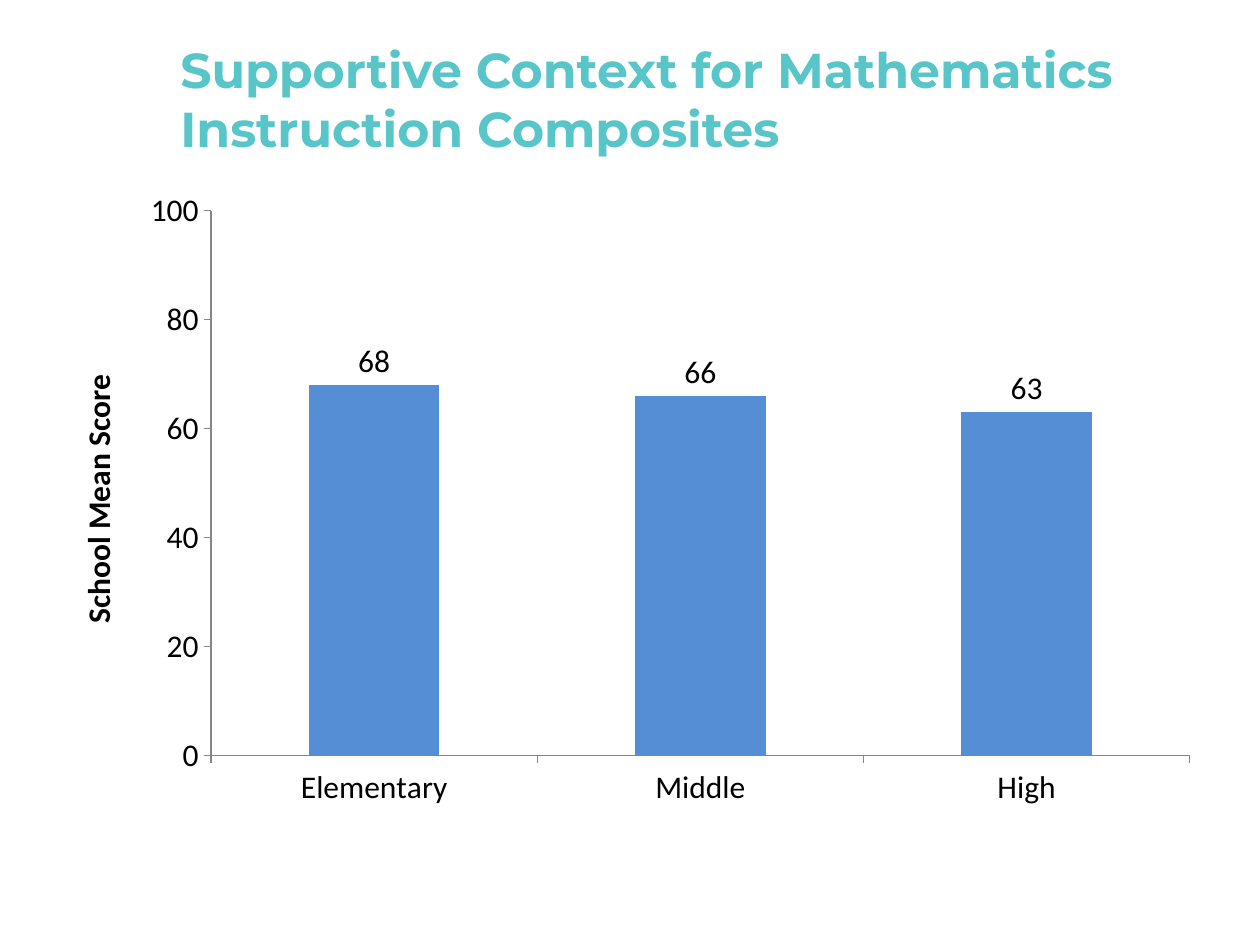
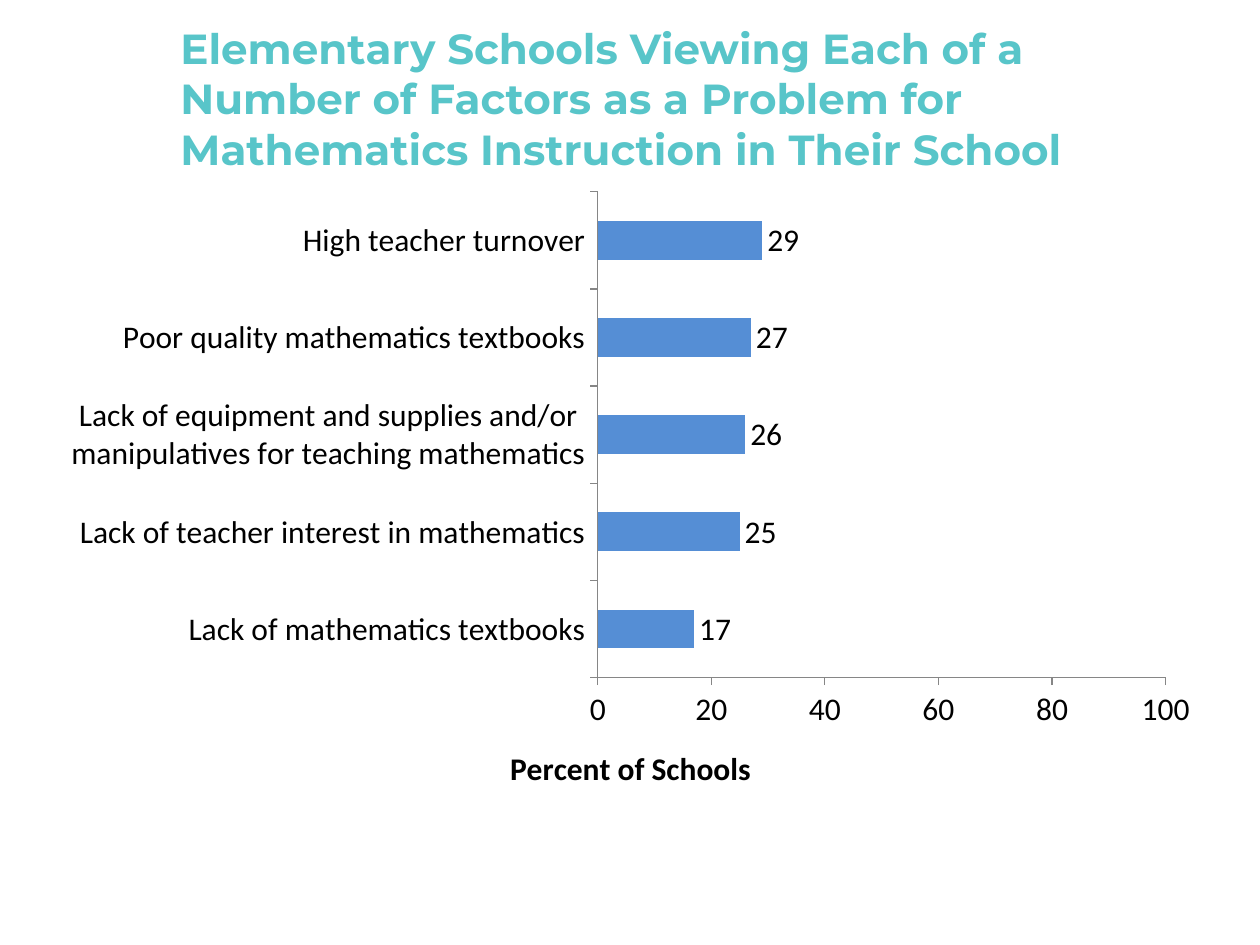
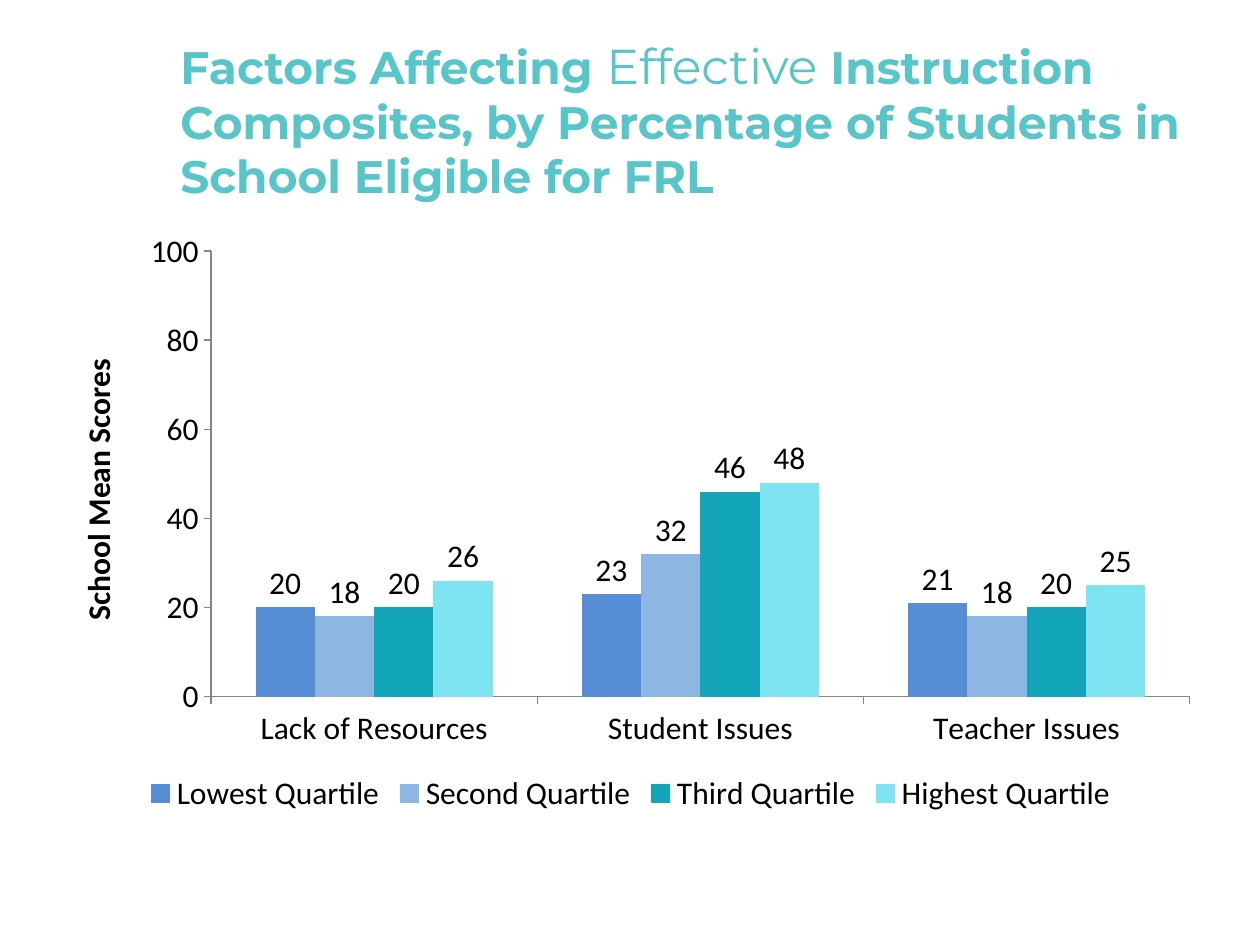
from pptx import Presentation
from pptx.chart.data import CategoryChartData
from pptx.dml.color import RGBColor
from pptx.enum.chart import (
    XL_CHART_TYPE as ChartType,
    XL_LABEL_POSITION as LabelPosition,
    XL_LEGEND_POSITION as LegendPosition,
    XL_TICK_MARK as TickMark,
)
from pptx.enum.text import MSO_ANCHOR
from pptx.util import Pt

PX = 914400 // 126
TITLE_FONT = "Montserrat"
CHART_FONT = "Calibri"
CHART_SIZE = 18

TEAL_TITLE = RGBColor(0x58, 0xC5, 0xC9)
BLACK = RGBColor(0x00, 0x00, 0x00)
AXIS_GRAY = RGBColor(0x86, 0x86, 0x86)
SERIES_COLORS = [
    RGBColor(0x55, 0x8E, 0xD5),
    RGBColor(0x8E, 0xB6, 0xE3),
    RGBColor(0x13, 0xA6, 0xBA),
    RGBColor(0x7F, 0xE4, 0xF2),
]

CHART_BOTTOM = 819


def add_page(deck):
    return deck.slides.add_slide(deck.slide_layouts[6])


def add_title(page, spans, top=38):
    """Add a title from (text, size, bold) spans."""
    box = page.shapes.add_textbox(168 * PX, top * PX, 1029 * PX, 120 * PX)
    frame = box.text_frame
    frame.word_wrap = True
    frame.vertical_anchor = MSO_ANCHOR.MIDDLE
    para = frame.paragraphs[0]
    for text, size, bold in spans:
        span = para.add_run()
        span.text = text
        span.font.name = TITLE_FONT
        span.font.size = Pt(size)
        span.font.bold = bold
        span.font.color.rgb = TEAL_TITLE


def style_axis(axis):
    axis.has_major_gridlines = False
    axis.major_tick_mark = TickMark.OUTSIDE
    axis.minor_tick_mark = TickMark.NONE
    axis.format.line.color.rgb = AXIS_GRAY
    axis.format.line.width = Pt(0.75)
    axis.tick_labels.font.size = Pt(CHART_SIZE)


def style_score_axis(axis, title):
    """Scale the value axis from 0 to 100 and name it."""
    style_axis(axis)
    axis.minimum_scale = 0
    axis.maximum_scale = 100
    axis.major_unit = 20
    frame = axis.axis_title.text_frame
    frame.text = title
    font = frame.paragraphs[0].runs[0].font
    font.name = CHART_FONT
    font.size = Pt(CHART_SIZE)
    font.bold = True
    font.color.rgb = BLACK


def style_series(series, color):
    series.format.fill.solid()
    series.format.fill.fore_color.rgb = color
    series.invert_if_negative = False
    labels = series.data_labels
    labels.show_value = True
    labels.position = LabelPosition.OUTSIDE_END
    labels.font.size = Pt(CHART_SIZE)


def add_bar_chart(page, kind, categories, series_values, axis_title, top=179):
    data = CategoryChartData(number_format="0")
    data.categories = categories
    for name, values in series_values.items():
        data.add_series(name, values)
    chart = page.shapes.add_chart(
        kind, 48 * PX, top * PX, 1165 * PX, (CHART_BOTTOM - top) * PX, data
    ).chart
    chart.has_title = False
    chart.font.name = CHART_FONT
    chart.font.size = Pt(CHART_SIZE)
    chart.font.color.rgb = BLACK
    style_axis(chart.category_axis)
    style_score_axis(chart.value_axis, axis_title)

    plot = chart.plots[0]
    plot.gap_width = 150
    plot.overlap = 0
    plot.vary_by_categories = False
    for series, color in zip(plot.series, SERIES_COLORS):
        style_series(series, color)

    chart.has_legend = len(series_values) > 1
    if chart.has_legend:
        chart.legend.position = LegendPosition.BOTTOM
        chart.legend.include_in_layout = False
        chart.legend.font.size = Pt(CHART_SIZE)


def add_context_page(deck):
    page = add_page(deck)
    add_title(page, [
        ("Supportive Context for Mathematics Instruction Composites", 28, True),
    ])
    add_bar_chart(
        page, ChartType.COLUMN_CLUSTERED,
        ["Elementary", "Middle", "High"],
        {"Series 1": [68, 66, 63]},
        "School Mean Score",
    )


def add_problems_page(deck):
    page = add_page(deck)
    add_title(page, [
        ("Elementary Schools Viewing Each of a Number of Factors as a Problem "
         "for Mathematics Instruction in Their School", 24, True),
    ])
    add_bar_chart(
        page, ChartType.BAR_CLUSTERED,
        [
            "Lack of mathematics textbooks",
            "Lack of teacher interest in mathematics",
            "Lack of equipment and supplies and/or manipulatives "
            "for teaching mathematics",
            "Poor quality mathematics textbooks",
            "High teacher turnover",
        ],
        {"Series 1": [17, 25, 26, 27, 29]},
        "Percent of Schools",
    )


def add_quartiles_page(deck):
    page = add_page(deck)
    add_title(page, [
        ("Factors Affecting ", 26, True),
        ("Effective", 28, False),
        (" Instruction Composites, by Percentage of Students in School "
         "Eligible for FRL", 26, True),
    ], top=59)
    add_bar_chart(
        page, ChartType.COLUMN_CLUSTERED,
        ["Lack of Resources", "Student Issues", "Teacher Issues"],
        {
            "Lowest Quartile": [20, 23, 21],
            "Second Quartile": [18, 32, 18],
            "Third Quartile": [20, 46, 20],
            "Highest Quartile": [26, 48, 25],
        },
        "School Mean Scores",
        top=220,
    )


def main():
    deck = Presentation()
    deck.slide_width = 1260 * PX
    deck.slide_height = 945 * PX
    add_context_page(deck)
    add_problems_page(deck)
    add_quartiles_page(deck)
    deck.save("out.pptx")


if __name__ == "__main__":
    main()
